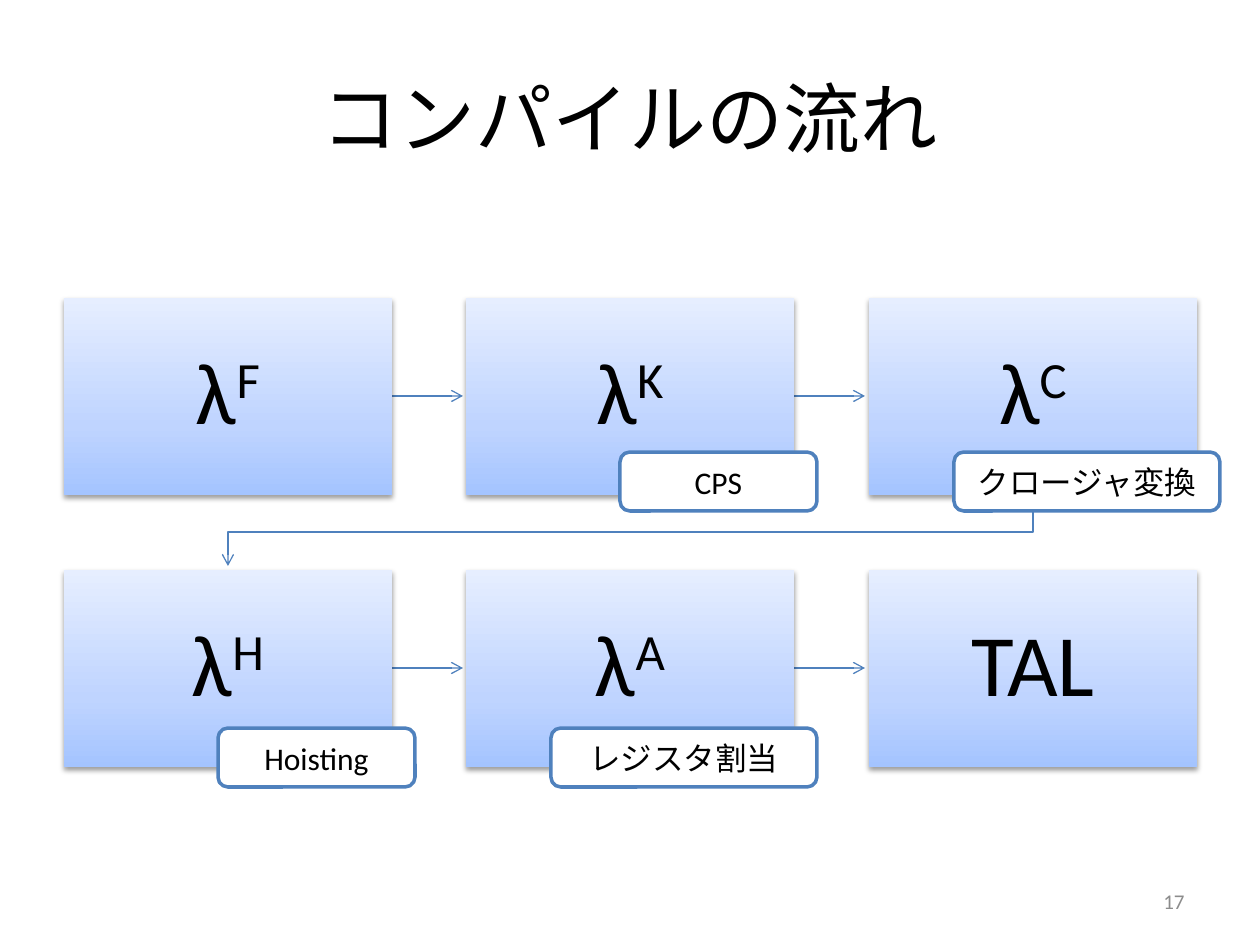
from copy import deepcopy

from pptx import Presentation
from pptx.dml.color import RGBColor
from pptx.enum.shapes import MSO_CONNECTOR, MSO_SHAPE
from pptx.enum.text import MSO_ANCHOR, PP_ALIGN
from pptx.oxml import parse_xml
from pptx.oxml.ns import nsdecls, qn
from pptx.util import Emu, Pt

PX = 914400 / 126
BLACK = RGBColor(0x00, 0x00, 0x00)
WHITE = RGBColor(0xFF, 0xFF, 0xFF)
GRAY = RGBColor(0x8C, 0x8C, 0x8C)
BLUE = RGBColor(0x4F, 0x81, 0xBD)
STOPS = [(0, RGBColor(0xA4, 0xC4, 0xFF)),
         (0.35, RGBColor(0xBF, 0xD4, 0xFF)),
         (1, RGBColor(0xE6, 0xEE, 0xFF))]
SHADE = (f'<a:outerShdw {nsdecls("a")} blurRad="40000" dist="20000" '
         'dir="5400000" rotWithShape="0"><a:srgbClr val="000000">'
         '<a:alpha val="38000"/></a:srgbClr></a:outerShdw>')


def px(*nums):
    return [Emu(round(n * PX)) for n in nums]


class Deck:
    font = "Calibri"

    def __init__(self, slide):
        self.slide = slide
        self.shapes = slide.shapes

    def style(self, frame, size, color=BLACK, align=PP_ALIGN.CENTER):
        frame.word_wrap = True
        frame.vertical_anchor = MSO_ANCHOR.MIDDLE
        for para in frame.paragraphs:
            para.alignment = align
            for run in para.runs:
                run.font.name = self.font
                run.font.size = Pt(size)
                run.font.color.rgb = color

    def title(self, text, *area):
        shape = self.shapes.title
        shape.left, shape.top, shape.width, shape.height = px(*area)
        shape.text_frame.text = text
        self.style(shape.text_frame, 44)

    def box(self, text, sup, *area):
        box = self.shapes.add_shape(MSO_SHAPE.RECTANGLE, *px(*area))
        box.line.fill.background()
        # Three-stop gradient, dark at the bottom
        box.fill.gradient()
        box.fill.gradient_angle = 90
        props = box._element.spPr
        stops = props.find(".//" + qn("a:gsLst"))
        stops.insert(1, deepcopy(stops[0]))
        for stop, (pos, color) in zip(box.fill.gradient_stops, STOPS):
            stop.position = pos
            stop.color.rgb = color
        # Soft shadow below
        box.shadow.inherit = False
        props.find(qn("a:effectLst")).append(parse_xml(SHADE))
        # Name with its superscript
        frame = box.text_frame
        frame.text = text
        para = frame.paragraphs[0]
        para.line_spacing = 0.9
        if sup:
            run = para.add_run()
            run.text = sup
            run.font._element.set("baseline", "30000")
        self.style(frame, 50)

    def label(self, text, *area):
        tag = self.shapes.add_shape(MSO_SHAPE.ROUNDED_RECTANGLE, *px(*area))
        tag.shadow.inherit = False
        tag.fill.solid()
        tag.fill.fore_color.rgb = WHITE
        tag.line.color.rgb = BLUE
        tag.line.width = Pt(2)
        frame = tag.text_frame
        frame.text = text
        frame.margin_left = frame.margin_right = px(8)[0]
        self.style(frame, 18)

    def head(self, shape):
        shape.line.color.rgb = BLUE
        shape.line.width = Pt(0.75)
        line = shape.line._get_or_add_ln()
        line.append(parse_xml(f'<a:tailEnd {nsdecls("a")} type="arrow"/>'))

    def arrow(self, *ends):
        link = self.shapes.add_connector(MSO_CONNECTOR.STRAIGHT, *px(*ends))
        self.head(link)
        link._element.spPr.append(parse_xml(f'<a:effectLst {nsdecls("a")}/>'))

    def bend(self, first, *rest):
        draw = self.shapes.build_freeform(*first, scale=PX)
        draw.add_line_segments(rest, close=False)
        link = draw.convert_to_shape()
        link.fill.background()
        link.shadow.inherit = False
        self.head(link)

    def note(self, text, *area):
        frame = self.shapes.add_textbox(*px(*area)).text_frame
        frame.text = text
        self.style(frame, 12, GRAY, PP_ALIGN.RIGHT)


def main():
    prs = Presentation()
    prs.slide_width, prs.slide_height = px(1260, 945)
    deck = Deck(prs.slides.add_slide(prs.slide_layouts[5]))
    deck.title("コンパイルの流れ", 63, 38, 1134, 157)

    # Stages in a grid of two rows and three columns
    cols, rows = (64, 466, 869), (298, 570)
    wide, high = 328, 197
    stages = [[("λ", "F"), ("λ", "K"), ("λ", "C")],
              [("λ", "H"), ("λ", "A"), ("TAL", "")]]

    # Arrows between the stages
    for top in rows:
        mid = top + high // 2
        for left in cols[:2]:
            deck.arrow(left + wide, mid, left + wide + 71, mid)
    start, end = cols[2] + wide // 2, cols[0] + wide // 2
    deck.bend((start, rows[0] + high), (start, 532), (end, 532),
              (end, rows[1] - 4))

    for top, row in zip(rows, stages):
        for left, (text, sup) in zip(cols, row):
            deck.box(text, sup, left, top, wide, high)

    # Step labels, each ending 23 px right of its stage
    labels = [("CPS", 1, 452, 197), ("クロージャ変換", 2, 452, 266),
              ("Hoisting", 0, 728, 197), ("レジスタ割当", 1, 728, 266)]
    for text, col, top, size in labels:
        deck.label(text, cols[col] + wide + 23 - size, top, size, 59)

    # Page number
    deck.note("17", 903, 876, 294, 50)
    prs.save("out.pptx")


if __name__ == "__main__":
    main()
